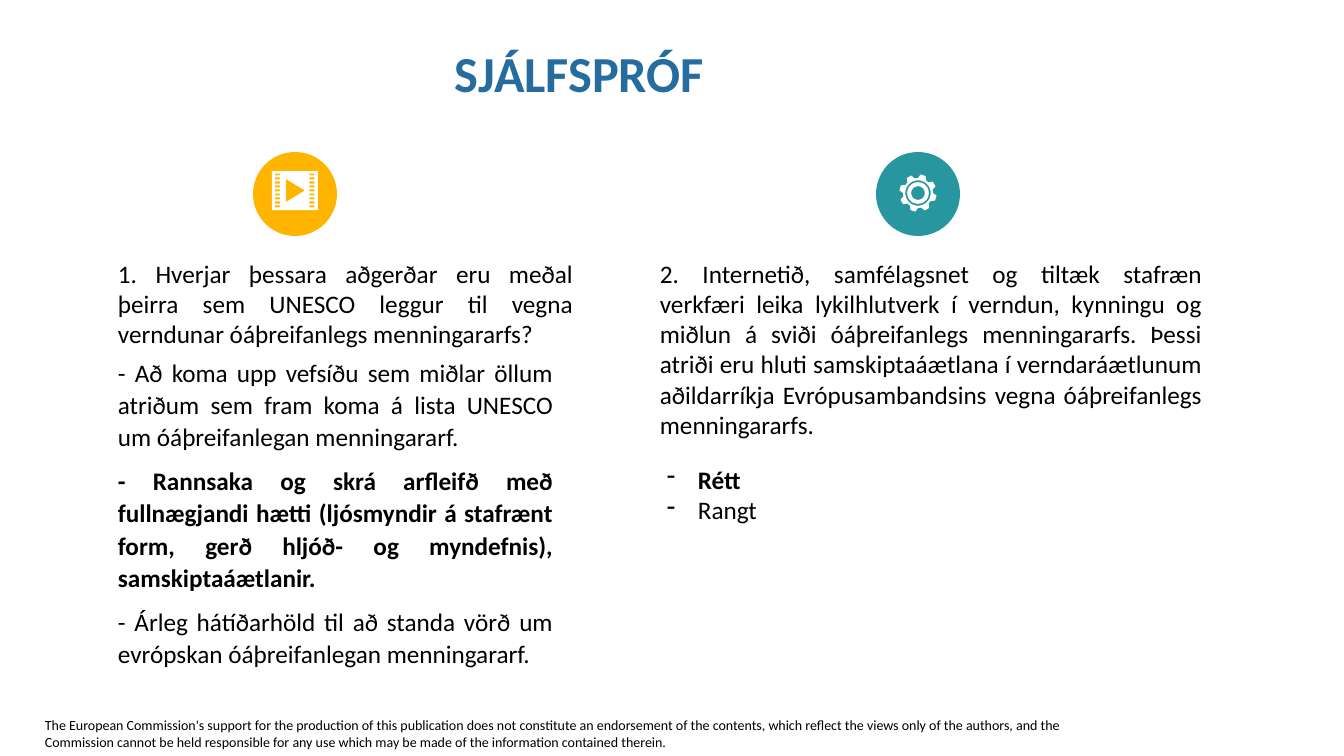
from math import cos, radians, sin

from lxml.etree import SubElement
from pptx import Presentation
from pptx.dml.color import RGBColor
from pptx.enum.shapes import MSO_SHAPE
from pptx.enum.text import MSO_ANCHOR, PP_ALIGN
from pptx.oxml.ns import qn
from pptx.util import Pt

BLACK = RGBColor(0x00, 0x00, 0x00)
WHITE = RGBColor(0xFF, 0xFF, 0xFF)
BLUE = RGBColor(0x26, 0x6C, 0x9F)
AMBER = RGBColor(0xFF, 0xB5, 0x00)
TEAL = RGBColor(0x27, 0x96, 0x9F)

TITLE = "SJÁLFSPRÓF"
FOOTER = (
    "The European Commission's support for the production of this publication does not "
    "constitute an endorsement of the contents, which reflect the views only of the authors, "
    "and the Commission cannot be held responsible for any use which may be made of the "
    "information contained therein."
)
FIRST_QUESTION = (
    "1. Hverjar þessara aðgerðar eru meðal þeirra sem UNESCO leggur til vegna "
    "verndunar óáþreifanlegs menningararfs?"
)
FIRST_ANSWERS = [
    ("- Að koma upp vefsíðu sem miðlar öllum atriðum sem fram koma á lista UNESCO "
     "um óáþreifanlegan menningararf.", False),
    ("- Rannsaka og skrá arfleifð með fullnægjandi hætti (ljósmyndir á stafrænt form, "
     "gerð hljóð- og myndefnis), samskiptaáætlanir.", True),
    ("- Árleg hátíðarhöld til að standa vörð um evrópskan óáþreifanlegan menningararf.", False),
]
SECOND_QUESTION = (
    "2. Internetið, samfélagsnet og tiltæk stafræn verkfæri leika lykilhlutverk í verndun, "
    "kynningu og miðlun á sviði óáþreifanlegs menningararfs. Þessi atriði eru hluti "
    "samskiptaáætlana í verndaráætlunum aðildarríkja Evrópusambandsins vegna "
    "óáþreifanlegs menningararfs."
)
SECOND_ANSWERS = [("Rétt", True), ("Rangt", False)]

EMU_PER_PX = 914400 / 100.8


def px(length):
    return round(length * EMU_PER_PX)


presentation = Presentation()
presentation.slide_width = px(1344)
presentation.slide_height = px(756)
slide = presentation.slides.add_slide(presentation.slide_layouts[6])


def add_text(box, lines, size=18, color=BLACK, align=PP_ALIGN.JUSTIFY,
             line_spacing=None, space_after=None, bullet=None):
    shape = slide.shapes.add_textbox(*map(px, box))
    text_frame = shape.text_frame
    text_frame.word_wrap = True
    text_frame.text = "\n".join(text for text, bold in lines)
    for paragraph, (text, bold) in zip(text_frame.paragraphs, lines):
        paragraph.alignment = align
        if line_spacing:
            paragraph.line_spacing = line_spacing
        if space_after:
            paragraph.space_after = Pt(space_after)
        if bullet:
            properties = paragraph._p.get_or_add_pPr()
            properties.set("marL", str(px(31)))
            properties.set("indent", str(px(-31)))
            SubElement(properties, qn("a:buChar")).set("char", bullet)
        for run in paragraph.runs:
            run.font.name = "Calibri"
            run.font.size = Pt(size)
            run.font.bold = bold
            run.font.color.rgb = color
    return text_frame


def add_disc(center_x, center_y, color):
    diameter = 84
    corner = (center_x - diameter / 2, center_y - diameter / 2)
    disc = slide.shapes.add_shape(MSO_SHAPE.OVAL, *map(px, (*corner, diameter, diameter)))
    disc.shadow.inherit = False
    disc.fill.solid()
    disc.fill.fore_color.rgb = color
    disc.line.fill.background()


def add_outlines(outlines):
    points = [[(px(x), px(y)) for x, y in outline] for outline in outlines]
    builder = slide.shapes.build_freeform(*points[0][0])
    for index, outline in enumerate(points):
        if index:
            builder.move_to(*outline[0])
        builder.add_line_segments(outline[1:], close=True)
    shape = builder.convert_to_shape()
    shape.shadow.inherit = False
    shape.fill.solid()
    shape.fill.fore_color.rgb = WHITE
    shape.line.fill.background()


def rectangle(left, top, width, height):
    right, bottom = left + width, top + height
    return [(left, top), (right, top), (right, bottom), (left, bottom)]


def polar(center, radius, degrees):
    angle = radians(degrees)
    return center[0] + radius * cos(angle), center[1] + radius * sin(angle)


def film_outlines():
    play = [(286, 179), (286, 202), (305, 190.5)]
    holes = [rectangle(left, 173.5 + 4 * row, 5, 2) for left in (275, 309.5) for row in range(9)]
    return [rectangle(272, 171, 46, 39), play, *holes]


def gear_outlines(center):
    tooth_profile = [(15, -16), (18.7, -8), (18.7, 8), (15, 16)]
    teeth = [
        polar(center, radius, 45 * tooth - 74 + offset)
        for tooth in range(8)
        for radius, offset in tooth_profile
    ]
    rings = [
        [polar(center, radius, degrees) for degrees in range(0, 360, 10)]
        for radius in (12.7, 10.8, 6.8)
    ]
    return [teeth, *rings]


title_frame = add_text((445, 36, 890, 80), [(TITLE, True)], 36, BLUE,
                       PP_ALIGN.LEFT, line_spacing=0.9)
title_frame.vertical_anchor = MSO_ANCHOR.MIDDLE
add_text((35, 712, 1054, 44), [(FOOTER, False)], 10, align=PP_ALIGN.LEFT)

add_disc(295, 194, AMBER)
add_outlines(film_outlines())
add_text((108, 253, 475, 92), [(FIRST_QUESTION, False)])
add_text((108, 350, 455, 330), FIRST_ANSWERS, line_spacing=1.07, space_after=8)

add_disc(918, 194, TEAL)
add_outlines(gear_outlines((918, 193)))
add_text((650, 253, 562, 190), [(SECOND_QUESTION, False)])
add_text((657, 459, 242, 92), SECOND_ANSWERS, bullet="-")

presentation.save("out.pptx")
